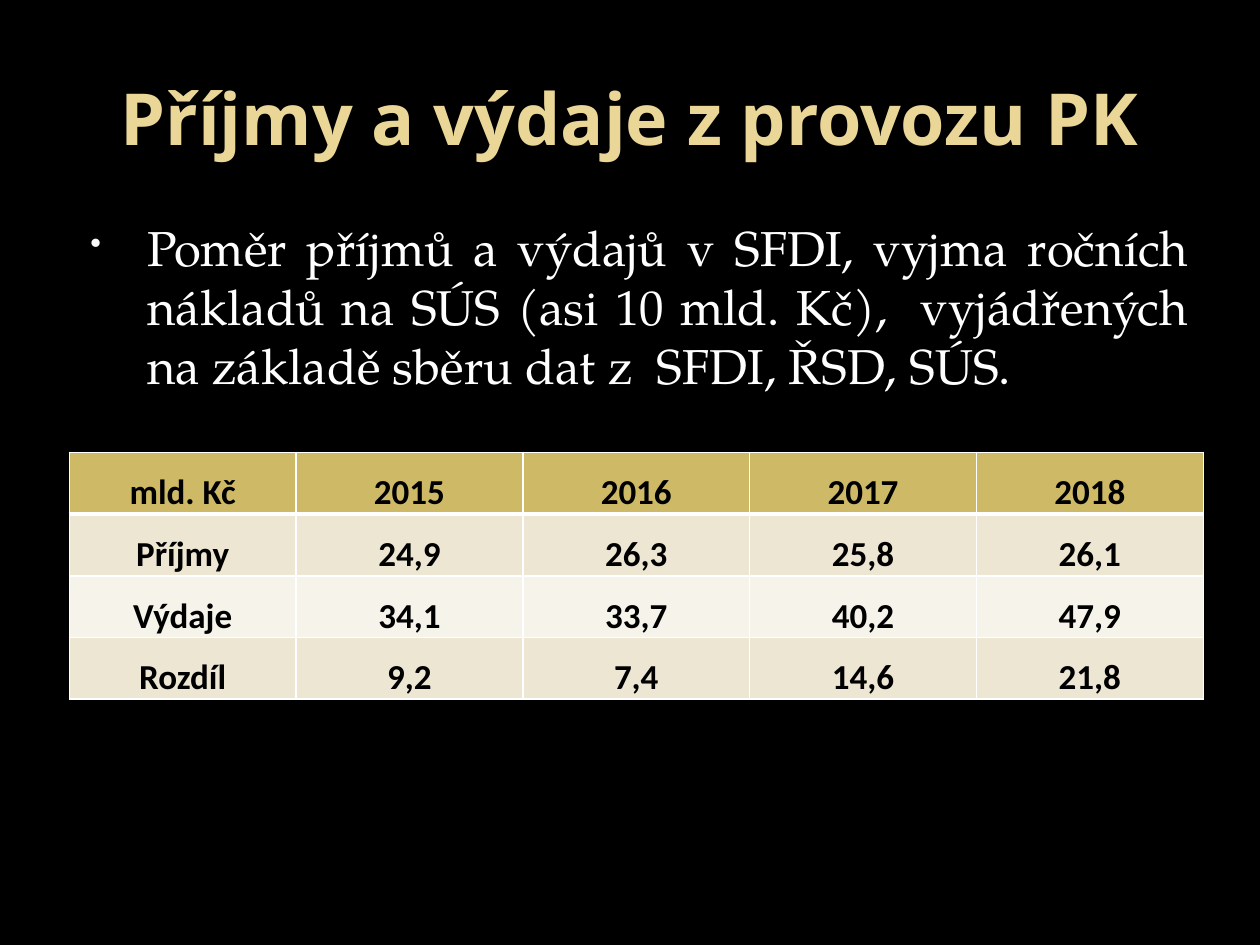
"""Build a slide comparing income and spending on road operation."""

from dataclasses import dataclass

import lxml.etree
import pptx
import pptx.dml.color
import pptx.enum.text
import pptx.oxml.ns
import pptx.util

GRID_UNIT = pptx.util.Inches(0.05)
GRID_COLUMNS, GRID_ROWS = 200, 150
ANCHOR = pptx.enum.text.MSO_ANCHOR
ALIGN = pptx.enum.text.PP_ALIGN


@dataclass(frozen=True)
class TextStyle:
    """Typeface, size in points, colour and weight of a text."""

    font: str
    size: float
    color: str
    bold: bool = False


@dataclass(frozen=True)
class Theme:
    """Colours and type styles of the slide."""

    background: str = "000000"
    header_fill: str = "CEB966"
    band_fills: tuple[str, str] = ("EDE6D3", "F6F3EA")
    border: str = "FFFFFF"
    bullet: str = "F9F9F9"
    title: TextStyle = TextStyle("Noto Sans", 41, "EAD696", True)
    body: TextStyle = TextStyle("TeX Gyre Pagella", 28, "FFFFFF")
    cell: TextStyle = TextStyle("Calibri", 20, "000000", True)


@dataclass(frozen=True)
class Box:
    """A place on the slide in grid columns and rows."""

    column: float
    row: float
    columns: float
    rows: float

    def lengths(self) -> list[int]:
        """Return left, top, width and height as slide lengths."""
        return [grid(n) for n in (self.column, self.row, self.columns, self.rows)]


THEME = Theme()
TITLE_BOX = Box(10, 6, 180, 25)
BODY_BOX = Box(9.4, 33.6, 181.2, 29)
TABLE_BOX = Box(11, 71.8, 180, 39.2)
TITLE = "Příjmy a výdaje z provozu PK"
BODY = (
    "Poměr příjmů a výdajů v SFDI, vyjma ročních nákladů na SÚS "
    "(asi 10 mld. Kč),  vyjádřených na základě sběru dat z  SFDI, ŘSD, SÚS."
)
BUDGET = (
    ("mld. Kč", "2015", "2016", "2017", "2018"),
    ("Příjmy", "24,9", "26,3", "25,8", "26,1"),
    ("Výdaje", "34,1", "33,7", "40,2", "47,9"),
    ("Rozdíl", "9,2", "7,4", "14,6", "21,8"),
)


def grid(units: float) -> int:
    """Convert grid units to a slide length."""
    return pptx.util.Emu(round(units * GRID_UNIT))


def rgb(color: str) -> pptx.dml.color.RGBColor:
    """Convert a hexadecimal colour."""
    return pptx.dml.color.RGBColor.from_string(color)


def add_element(parent, tag: str, **attributes: str):
    """Append a drawing element to its parent."""
    return lxml.etree.SubElement(parent, pptx.oxml.ns.qn(tag), attributes)


def write(text_frame, text: str, style: TextStyle, alignment):
    """Set the text of a frame and format its paragraph."""
    text_frame.text = text
    paragraph = text_frame.paragraphs[0]
    paragraph.alignment = alignment
    for run in paragraph.runs:
        run.font.name = style.font
        run.font.size = pptx.util.Pt(style.size)
        run.font.bold = style.bold
        run.font.color.rgb = rgb(style.color)
    return paragraph


def add_text(slide, box: Box, text: str, style: TextStyle, alignment, anchor):
    """Add a wrapping text box and return its paragraph."""
    text_frame = slide.shapes.add_textbox(*box.lengths()).text_frame
    text_frame.word_wrap = True
    text_frame.vertical_anchor = anchor
    return write(text_frame, text, style, alignment)


def add_bullet(paragraph) -> None:
    """Give a paragraph a small bullet and a hanging indent."""
    paragraph.space_before = pptx.util.Pt(0.2 * THEME.body.size)
    properties = paragraph._p.get_or_add_pPr()
    properties.set("marL", str(grid(12)))
    properties.set("indent", str(grid(-9)))
    color = add_element(properties, "a:buClr")
    add_element(color, "a:srgbClr", val=THEME.bullet)
    add_element(properties, "a:buSzPct", val="65000")
    add_element(properties, "a:buChar", char="•")


def add_borders(cell, top: float, bottom: float) -> None:
    """Draw the four cell borders, with the top and bottom widths in points."""
    properties = cell._tc.get_or_add_tcPr()
    for side, width in (("L", 1), ("R", 1), ("T", top), ("B", bottom)):
        line = add_element(properties, f"a:ln{side}", w=str(pptx.util.Pt(width)))
        fill = add_element(line, "a:solidFill")
        add_element(fill, "a:srgbClr", val=THEME.border)


def add_budget_table(slide, box: Box, rows: tuple[tuple[str, ...], ...]) -> None:
    """Add the banded table with a thick rule below its header."""
    frame = slide.shapes.add_table(len(rows), len(rows[0]), *box.lengths())
    table = frame.table
    for row_index, values in enumerate(rows):
        table.rows[row_index].height = grid(box.rows / len(rows))
        fill = THEME.band_fills[(row_index - 1) % 2] if row_index else THEME.header_fill
        for column_index, value in enumerate(values):
            cell = table.cell(row_index, column_index)
            cell.margin_left = cell.margin_right = 0
            cell.margin_top = cell.margin_bottom = 0
            cell.vertical_anchor = ANCHOR.BOTTOM
            write(cell.text_frame, value, THEME.cell, ALIGN.CENTER)
            add_borders(cell, 3 if row_index == 1 else 1, 3 if row_index == 0 else 1)
            cell.fill.solid()
            cell.fill.fore_color.rgb = rgb(fill)


def main() -> None:
    """Build and save the presentation."""
    presentation = pptx.Presentation()
    presentation.slide_width = grid(GRID_COLUMNS)
    presentation.slide_height = grid(GRID_ROWS)
    slide = presentation.slides.add_slide(presentation.slide_layouts[6])
    slide.background.fill.solid()
    slide.background.fill.fore_color.rgb = rgb(THEME.background)
    add_text(slide, TITLE_BOX, TITLE, THEME.title, ALIGN.CENTER, ANCHOR.MIDDLE)
    add_budget_table(slide, TABLE_BOX, BUDGET)
    add_bullet(add_text(slide, BODY_BOX, BODY, THEME.body, ALIGN.JUSTIFY, ANCHOR.TOP))
    presentation.save("out.pptx")


if __name__ == "__main__":
    main()
